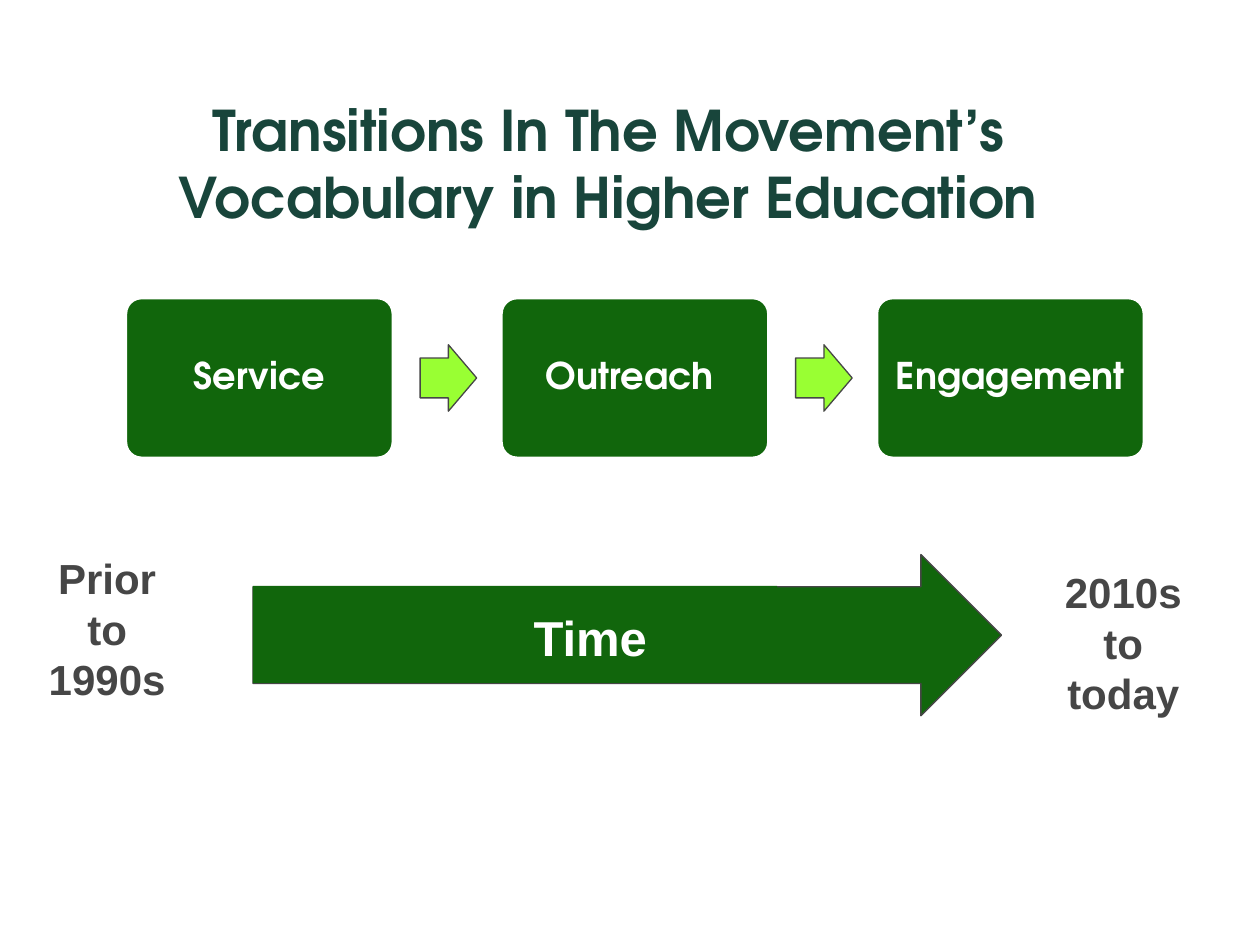
from dataclasses import dataclass

from pptx import Presentation
from pptx.dml.color import RGBColor
from pptx.enum.shapes import MSO_SHAPE
from pptx.enum.text import MSO_ANCHOR, PP_ALIGN
from pptx.util import Cm, Pt


@dataclass(frozen=True)
class Theme:
    heading_font: str = "TeX Gyre Adventor"
    body_font: str = "Arial"
    title_color: str = "18453B"
    green: str = "11660C"
    lime: str = "99FF33"
    gray: str = "464646"
    white: str = "FFFFFF"
    title_size: float = 32
    time_size: float = 28
    period_size: float = 24
    stage_size: float = 21


class SlideBuilder:
    def __init__(self, slide, theme):
        self.slide = slide
        self.theme = theme

    def add_lines(self, frame, lines, font, size, color):
        """Fill a text frame with centred bold paragraphs."""
        frame.word_wrap = True
        for index, line in enumerate(lines):
            paragraph = frame.paragraphs[0] if index == 0 else frame.add_paragraph()
            paragraph.alignment = PP_ALIGN.CENTER
            run = paragraph.add_run()
            run.text = line
            run.font.name = font
            run.font.size = Pt(size)
            run.font.bold = True
            run.font.color.rgb = RGBColor.from_string(color)

    def title(self, text, left, top, width, height):
        heading = self.slide.shapes.title
        heading.left, heading.top = Cm(left), Cm(top)
        heading.width, heading.height = Cm(width), Cm(height)
        heading.text_frame.vertical_anchor = MSO_ANCHOR.MIDDLE
        self.add_lines(heading.text_frame, [text], self.theme.heading_font,
                       self.theme.title_size, self.theme.title_color)

    def block(self, kind, left, top, width, height, fill, line=None, weight=0.75):
        shape = self.slide.shapes.add_shape(
            kind, Cm(left), Cm(top), Cm(width), Cm(height))
        shape.shadow.inherit = False
        shape.fill.solid()
        shape.fill.fore_color.rgb = RGBColor.from_string(fill)
        if line:
            shape.line.color.rgb = RGBColor.from_string(line)
            shape.line.width = Pt(weight)
        else:
            shape.line.fill.background()
        return shape

    def arrow(self, left, top, width, height, fill):
        arrow = self.block(MSO_SHAPE.RIGHT_ARROW, left, top, width, height,
                           fill, self.theme.gray)
        arrow.adjustments[0] = 0.6
        arrow.adjustments[1] = 0.5

    def stage(self, name, left, top, width, height):
        card = self.block(MSO_SHAPE.ROUNDED_RECTANGLE, left, top, width, height,
                          self.theme.green, self.theme.white, 2)
        card.adjustments[0] = 0.1
        frame = card.text_frame
        frame.margin_left = frame.margin_right = Cm(0.23)
        frame.vertical_anchor = MSO_ANCHOR.MIDDLE
        self.add_lines(frame, [name], self.theme.heading_font,
                       self.theme.stage_size, self.theme.white)
        frame.paragraphs[0].line_spacing = 0.9

    def label(self, lines, left, top, width, height, size, color):
        box = self.slide.shapes.add_textbox(
            Cm(left), Cm(top), Cm(width), Cm(height))
        self.add_lines(box.text_frame, lines, self.theme.body_font, size, color)


def main():
    theme = Theme()
    presentation = Presentation()
    presentation.slide_width, presentation.slide_height = Cm(25.4), Cm(19.05)
    slide = presentation.slides.add_slide(presentation.slide_layouts[5])
    builder = SlideBuilder(slide, theme)

    # Heading
    builder.title("Transitions In The Movement’s Vocabulary in Higher Education",
                  0.74, 1.96, 23.06, 2.62)

    # Three stages with an arrow between neighbours
    stages = ["Service", "Outreach ", "Engagement"]
    first_left, pitch = 2.53, 7.57
    for index, name in enumerate(stages):
        left = first_left + index * pitch
        builder.stage(name, left, 6, 5.4, 3.24)
        if index < len(stages) - 1:
            builder.arrow(left + 5.94, 6.95, 1.14, 1.34, theme.lime)

    # Periods at both ends of the time line
    builder.label(["Prior to", "1990s"], 0.71, 11.02, 2.9, 3.33,
                  theme.period_size, theme.gray)
    builder.label(["2010s", "to today"], 20.83, 11.3, 3.63, 3.33,
                  theme.period_size, theme.gray)

    # Time arrow, with a bar over its shaft
    builder.arrow(5.1, 11.18, 15.09, 3.25, theme.green)
    builder.block(MSO_SHAPE.RECTANGLE, 5.1, 11.81, 10.57, 1.96, theme.green)
    builder.label(["Time"], 5.84, 12.12, 12.12, 1.45,
                  theme.time_size, theme.white)

    presentation.save("out.pptx")


if __name__ == "__main__":
    main()
